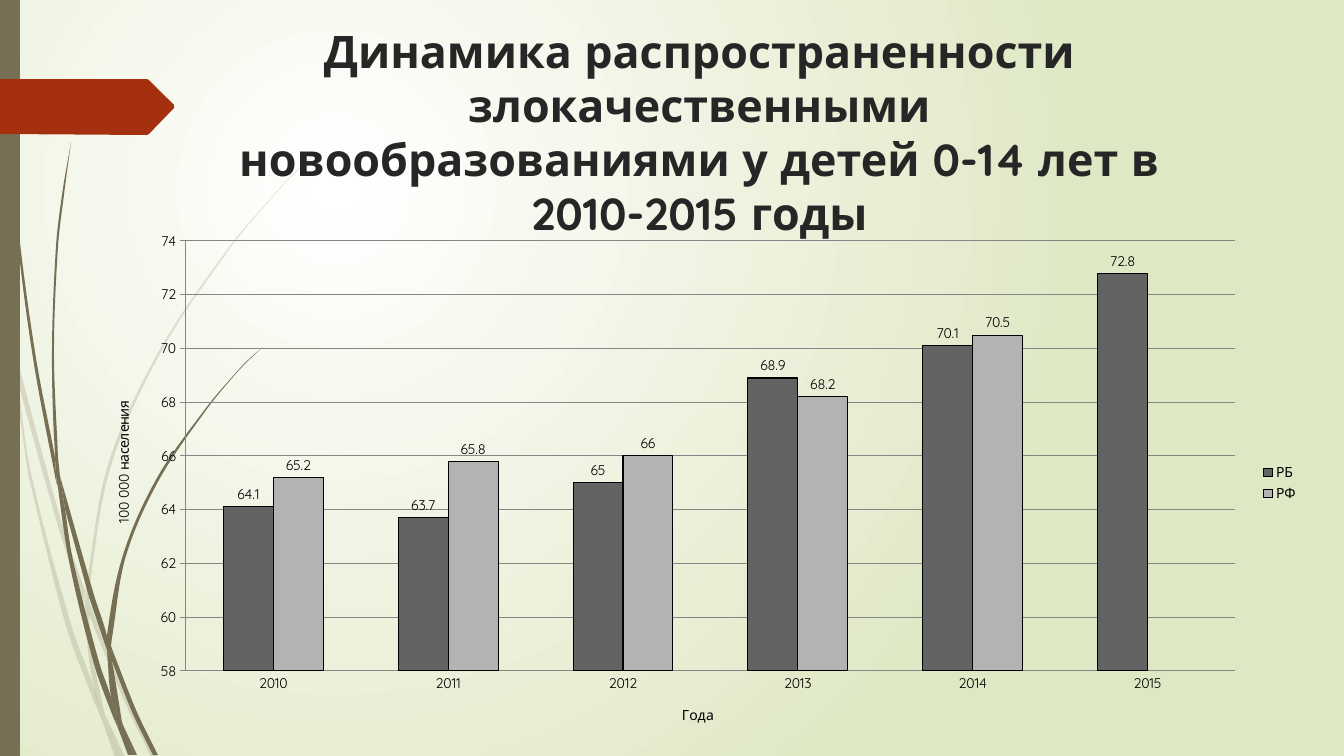
from itertools import pairwise
from math import dist
from lxml import etree
from pptx import Presentation
from pptx.chart.data import CategoryChartData
from pptx.dml.color import RGBColor
from pptx.enum.chart import XL_CHART_TYPE, XL_LABEL_POSITION, XL_LEGEND_POSITION, XL_TICK_MARK
from pptx.enum.shapes import MSO_SHAPE
from pptx.enum.text import MSO_ANCHOR, MSO_AUTO_SIZE, PP_ALIGN
from pptx.oxml import parse_xml
from pptx.oxml.ns import qn
from pptx.util import Pt

COLUMN = XL_CHART_TYPE.COLUMN_CLUSTERED
OUTER = XL_LABEL_POSITION.OUTSIDE_END
RIGHT = XL_LEGEND_POSITION.RIGHT
NO_TICK, TICK = XL_TICK_MARK.NONE, XL_TICK_MARK.OUTSIDE
RECT = MSO_SHAPE.RECTANGLE
TOP, CENTER, FIXED = MSO_ANCHOR.TOP, PP_ALIGN.CENTER, MSO_AUTO_SIZE.NONE

SCALE = 914400 / 100.8
WIDE, HIGH = 1344, 756
FONT = "Quicksand"
OLIVE, RUST, INK, BLACK, GRID = "766F54", "A53010", "262626", "000000", "868686"
TITLE = "Динамика распространенности злокачественными новообразованиями у детей 0-14 лет в 2010-2015 годы"
YEARS = ["2010", "2011", "2012", "2013", "2014", "2015"]
SERIES = [
    ("РБ", "636363", [64.1, 63.7, 65, 68.9, 70.1, 72.8]),
    ("РФ", "B3B3B3", [65.2, 65.8, 66, 68.2, 70.5, None]),
]
FLAG = [(0, 79), (147, 79), (149, 80), (174, 105), (174, 108), (149, 134), (147, 135), (0, 134)]
PALE = [
    ([(0, 284), (9, 325), (11, 353)], [(10, 347), (0, 301)]),
    ([(14, 348), (62, 524), (85, 591)], [(84, 604), (58, 526), (17, 379)]),
    ([(89, 601), (93, 612), (128, 698), (156, 757)], [(151, 757), (124, 700), (89, 615)]),
    ([(106, 717), (125, 757)], [(120, 757)]),
    ([(11, 353), (17, 379), (31, 473), (71, 624), (94, 688), (100, 713), (102, 720)],
     [(93, 699), (66, 626), (28, 474)]),
    ([(85, 604), (88, 651), (94, 688), (97, 698), (106, 717)],
     [(104, 712), (92, 651), (89, 615), (89, 613)]),
    ([(314, 154), (291, 176), (270, 199), (230, 246), (159, 351), (108, 465), (86, 589), (86, 591)],
     [(89, 601), (89, 589), (111, 466), (161, 352), (231, 247), (270, 200), (292, 176), (314, 155)]),
    ([(102, 720), (115, 757)], [(120, 757)]),
    ([(86, 591), (85, 604)], [(89, 613), (89, 615), (89, 601)]),
    ([(94, 688), (100, 713), (102, 720), (120, 757)], [(106, 717), (97, 698)]),
]
DARK = [
    ([(3, 0), (3, 48), (7, 111), (17, 235), (33, 358), (56, 481), (57, 485)],
     [(55, 461), (55, 457), (36, 358), (19, 234), (8, 110), (5, 48), (4, 0)]),
    ([(60, 476), (94, 595), (107, 636), (107, 650)], [(89, 597), (65, 509)]),
    ([(111, 646), (114, 654), (137, 712), (158, 755)], [(153, 755), (133, 714), (112, 661)]),
    ([(57, 481), (69, 561), (94, 664), (112, 714), (118, 728)],
     [(117, 723), (111, 697), (99, 662), (73, 560), (65, 509)]),
    ([(71, 142), (62, 195), (56, 247), (52, 352), (55, 453), (60, 476)],
     [(58, 457), (54, 352), (58, 247), (64, 195), (71, 142)]),
    ([(123, 725), (137, 755)], [(134, 755)]),
    ([(55, 453), (55, 457), (57, 481), (65, 509)], [(60, 476)]),
    ([(263, 347), (247, 361), (233, 376), (206, 408), (157, 478), (123, 555), (107, 636), (111, 646)],
     [(112, 638), (126, 556), (159, 480), (207, 409), (233, 377), (247, 362), (263, 347)]),
    ([(118, 728), (128, 755)], [(132, 755)]),
    ([(107, 650), (111, 697), (117, 712), (123, 725)], [(122, 722), (112, 661), (110, 656)]),
    ([(107, 636), (107, 650)], [(110, 656), (112, 661), (111, 646)]),
    ([(111, 697), (117, 723), (118, 728), (131, 755)], [(134, 755), (123, 725), (117, 712)]),
]
BACK = """<a:gradFill xmlns:a="http://schemas.openxmlformats.org/drawingml/2006/main" rotWithShape="1">
<a:gsLst><a:gs pos="0"><a:srgbClr val="FFFFFF"/></a:gs><a:gs pos="100000"><a:srgbClr val="DFE8C4"/></a:gs></a:gsLst>
<a:path path="circle"><a:fillToRect l="50000" t="50000" r="100000" b="100000"/></a:path></a:gradFill>"""


def px(num):
    return round(num * SCALE)


def hue(code):
    return RGBColor.from_string(code)


def paint(shape, code, alpha=100):
    shape.shadow.inherit = False
    shape.fill.solid()
    shape.fill.fore_color.rgb = hue(code)
    shape.line.fill.background()
    if alpha < 100:
        tint = shape._element.spPr.find(qn("a:solidFill"))[0]
        etree.SubElement(tint, qn("a:alpha")).set("val", str(alpha * 1000))


def outline(shapes, points):
    spots = [(px(x), px(y)) for x, y in points]
    pen = shapes.build_freeform(*spots[0])
    pen.add_line_segments(spots[1:], close=True)
    return pen.convert_to_shape()


def bend(edge):
    ends = [edge[0], *edge, edge[-1]]
    slopes = []
    for a, b in zip(ends, ends[2:]):
        span = dist(a, b) or 1
        slopes.append(((b[0] - a[0]) / span, (b[1] - a[1]) / span))
    path = []
    for (a, b), (s, t) in zip(pairwise(edge), pairwise(slopes)):
        reach = dist(a, b) / 3
        path += [(a[0] + s[0] * reach, a[1] + s[1] * reach),
                 (b[0] - t[0] * reach, b[1] - t[1] * reach), b]
    return path


def strand(shapes, down, back, alpha):
    join = [down[-1], back[0], back[0]]
    shape = outline(shapes, [down[0], *bend(down), *join, *bend(back)])
    lines = list(shape._element.iter(qn("a:lnTo")))
    for first, mid, last in zip(lines[::3], lines[1::3], lines[2::3]):
        curve = etree.Element(qn("a:cubicBezTo"))
        first.addprevious(curve)
        for line in (first, mid, last):
            curve.append(line[0])
            line.getparent().remove(line)
    paint(shape, OLIVE, alpha)


def backdrop(slide):
    fill = slide.background.fill
    fill.solid()
    prop = slide._element.cSld.bg.bgPr
    prop.replace(prop.find(qn("a:solidFill")), parse_xml(BACK))
    for parts, alpha in ((PALE, 20), (DARK, 100)):
        group = slide.shapes.add_group_shape()
        for down, back in parts:
            strand(group.shapes, down, back, alpha)
    bar = slide.shapes.add_shape(RECT, 0, 0, px(20), px(HIGH))
    paint(bar, OLIVE)
    paint(outline(slide.shapes, FLAG), RUST)


def heading(slide, x, y, w, h):
    title = slide.shapes.title
    title.left, title.top, title.width, title.height = map(px, (x, y, w, h))
    slide.shapes._spTree.append(title._element)
    frame = title.text_frame
    frame.text = TITLE
    frame.word_wrap = True
    frame.auto_size = FIXED
    frame.vertical_anchor = TOP
    para = frame.paragraphs[0]
    para.alignment = CENTER
    font = para.font
    font.name, font.size, font.bold = FONT, Pt(32), True
    font.color.rgb = hue(INK)


def label(axis, text):
    frame = axis.axis_title.text_frame
    frame.text = text
    font = frame.paragraphs[0].font
    font.name, font.size, font.bold = FONT, Pt(10), False
    font.color.rgb = hue(BLACK)


def place(chart, **parts):
    area = chart._chartSpace.chart.plotArea
    layout = area.find(qn("c:layout"))
    if layout is None:
        layout = etree.Element(qn("c:layout"))
        area.insert(0, layout)
    manual = etree.SubElement(layout, qn("c:manualLayout"))
    rules = {"layoutTarget": "inner", "xMode": "edge", "yMode": "edge", **parts}
    for name, val in rules.items():
        etree.SubElement(manual, qn("c:" + name)).set("val", str(val))


def graph(slide, x, y, w, h):
    data = CategoryChartData()
    data.categories = YEARS
    for name, code, vals in SERIES:
        data.add_series(name, vals)
    chart = slide.shapes.add_chart(COLUMN, *map(px, (x, y, w, h)), data).chart
    chart.has_title = False
    chart.font.name, chart.font.size = FONT, Pt(10)
    chart.font.color.rgb = hue(BLACK)
    chart.has_legend = True
    chart.legend.position = RIGHT
    chart.legend.include_in_layout = False
    place(chart, x=93 / w, y=19 / h, w=1049 / w, h=430 / h)

    plot = chart.plots[0]
    plot.vary_by_categories = False
    plot.gap_width, plot.overlap = 150, 0
    plot.has_data_labels = True
    plot.data_labels.show_value = True
    plot.data_labels.position = OUTER
    for bars, (name, code, vals) in zip(plot.series, SERIES):
        bars.format.fill.solid()
        bars.format.fill.fore_color.rgb = hue(code)
        bars.format.line.color.rgb = hue(BLACK)
        bars.format.line.width = Pt(0.75)

    years, rate = chart.category_axis, chart.value_axis
    label(years, "Года")
    label(rate, "100 000 населения")
    years.major_tick_mark, rate.major_tick_mark = NO_TICK, TICK
    rate.minimum_scale, rate.maximum_scale, rate.major_unit = 58, 74, 2
    rate.has_major_gridlines = True
    for part in (years, rate, rate.major_gridlines):
        part.format.line.color.rgb = hue(GRID)
        part.format.line.width = Pt(0.75)


def main():
    deck = Presentation()
    deck.slide_width, deck.slide_height = px(WIDE), px(HIGH)
    slide = deck.slides.add_slide(deck.slide_layouts[5])
    backdrop(slide)
    heading(slide, 208, 19, 983, 141)
    graph(slide, 93, 222, 1215, 522)
    deck.save("out.pptx")


if __name__ == "__main__":
    main()
